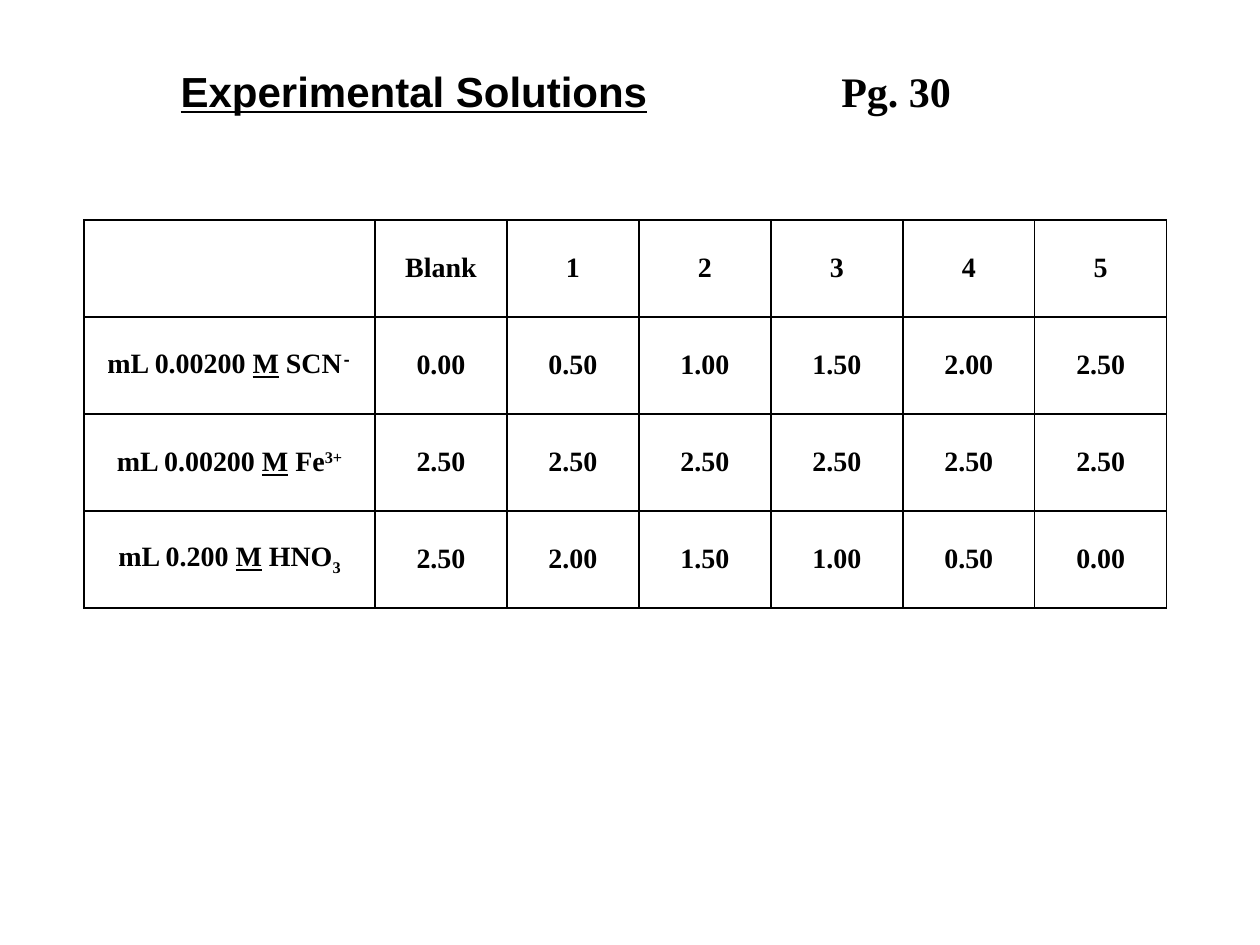
import dataclasses

import pptx
import pptx.dml.color
import pptx.enum.text
import pptx.oxml
import pptx.oxml.ns
import pptx.util

PX = 914400 // 126  # EMU in one px
TITLE_ONLY = 5


@dataclasses.dataclass(frozen=True)
class Theme:
    ink: str = "000000"
    paper: str = "FFFFFF"
    serif: str = "Times New Roman"
    sans: str = "Arial"
    mono: str = "Courier New"
    heading_size: int = 24
    cell_size: int = 16
    border_width: int = 1


THEME = Theme()

SOLUTIONS = ["Blank", "1", "2", "3", "4", "5"]

# Each reagent: amount, formula, raised or lowered mark, its baseline and font, volumes
REAGENTS = [
    ("mL 0.00200 ", " SCN", "-", 30, THEME.mono,
     ["0.00", "0.50", "1.00", "1.50", "2.00", "2.50"]),
    ("mL 0.00200 ", " Fe", "3+", 30, THEME.serif, ["2.50"] * 6),
    ("mL 0.200 ", " HNO", "3", -25, THEME.serif,
     ["2.50", "2.00", "1.50", "1.00", "0.50", "0.00"]),
]


def px(length):
    return pptx.util.Emu(length * PX)


def format_span(span, size, font, underline=False, baseline=0):
    span.font.size = pptx.util.Pt(size)
    span.font.name = font
    span.font.bold = True
    span.font.underline = underline
    span.font.color.rgb = pptx.dml.color.RGBColor.from_string(THEME.ink)
    if baseline:
        span._r.get_or_add_rPr().set("baseline", str(baseline * 1000))


def write_heading(box, text, font, underline=False):
    frame = box.text_frame
    frame.text = text
    frame.word_wrap = True
    frame.auto_size = pptx.enum.text.MSO_AUTO_SIZE.NONE
    frame.vertical_anchor = pptx.enum.text.MSO_ANCHOR.MIDDLE
    para = frame.paragraphs[0]
    para.alignment = pptx.enum.text.PP_ALIGN.LEFT
    format_span(para.runs[0], THEME.heading_size, font, underline)


def place(box, left, top, width, height):
    box.left, box.top, box.width, box.height = map(px, (left, top, width, height))


def style_cell(cell):
    properties = cell._tc.get_or_add_tcPr()
    for side in ("lnL", "lnR", "lnT", "lnB"):
        properties.append(pptx.oxml.parse_xml(
            f'<a:{side} {pptx.oxml.ns.nsdecls("a")} w="{THEME.border_width * 12700}">'
            f'<a:solidFill><a:srgbClr val="{THEME.ink}"/></a:solidFill></a:{side}>'))
    cell.fill.solid()
    cell.fill.fore_color.rgb = pptx.dml.color.RGBColor.from_string(THEME.paper)
    cell.vertical_anchor = pptx.enum.text.MSO_ANCHOR.MIDDLE
    cell.margin_left = cell.margin_right = px(9)
    cell.margin_top = cell.margin_bottom = 0


def write_cell(cell, *parts):
    """Fill a cell with parts of (text, font, underline, baseline)."""
    para = cell.text_frame.paragraphs[0]
    para.alignment = pptx.enum.text.PP_ALIGN.CENTER
    for text, font, underline, baseline in parts:
        span = para.add_run()
        span.text = text
        format_span(span, THEME.cell_size, font, underline, baseline)


def write_values(table, row, values):
    for column, value in enumerate(values, start=1):
        write_cell(table.cell(row, column), (value, THEME.serif, False, 0))


def add_solutions_table(page, left, top, label_width, value_width, row_height):
    rows, columns = len(REAGENTS) + 1, len(SOLUTIONS) + 1
    width = label_width + value_width * len(SOLUTIONS)
    table = page.shapes.add_table(
        rows, columns, px(left), px(top), px(width), px(row_height * rows)).table
    table.first_row = table.horz_banding = False
    for index, column in enumerate(table.columns):
        column.width = px(value_width if index else label_width)
    for cell in table.iter_cells():
        style_cell(cell)

    # Header row, then one row for each reagent
    write_values(table, 0, SOLUTIONS)
    for row, reagent in enumerate(REAGENTS, start=1):
        amount, formula, mark, baseline, mark_font, volumes = reagent
        write_cell(table.cell(row, 0),
                   (amount, THEME.serif, False, 0),
                   ("M", THEME.serif, True, 0),
                   (formula, THEME.serif, False, 0),
                   (mark, mark_font, False, baseline))
        write_values(table, row, volumes)


def main():
    deck = pptx.Presentation()
    deck.slide_width, deck.slide_height = px(1260), px(945)
    page = deck.slides.add_slide(deck.slide_layouts[TITLE_ONLY])

    # Heading and page reference
    title = page.shapes.title
    place(title, 168, 59, 525, 63)
    write_heading(title, "Experimental Solutions", THEME.sans, underline=True)
    reference = page.shapes.add_textbox(px(829), px(59), px(136), px(63))
    write_heading(reference, "Pg. 30", THEME.serif)

    # Volumes of each solution
    add_solutions_table(page, left=84, top=220, label_width=291,
                        value_width=132, row_height=97)

    deck.save("out.pptx")


if __name__ == "__main__":
    main()
